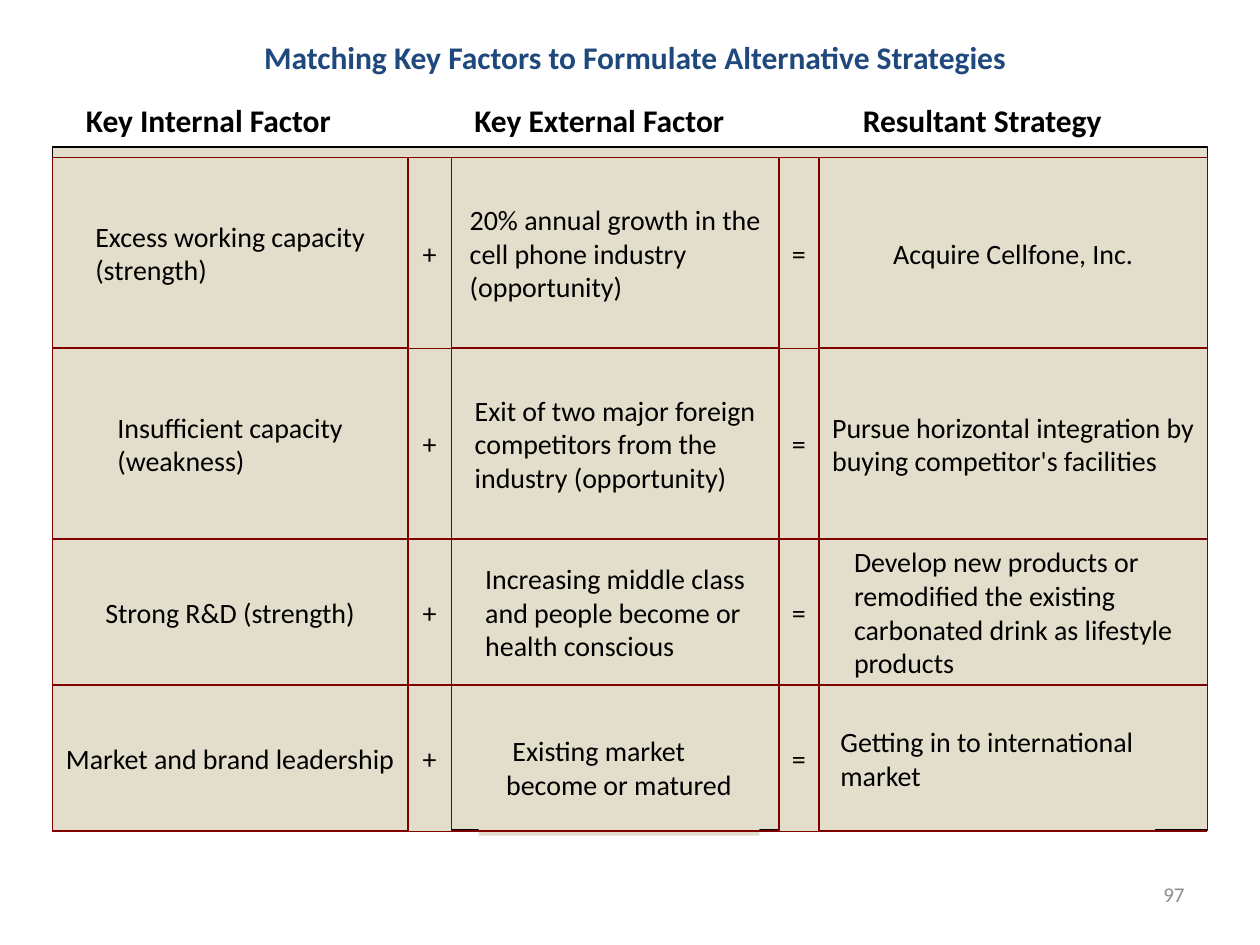
from dataclasses import dataclass
from itertools import pairwise

from lxml.etree import SubElement
from pptx import Presentation
from pptx.dml.color import RGBColor as Rgb
from pptx.enum.shapes import MSO_CONNECTOR as Conn, MSO_SHAPE as Form
from pptx.enum.text import MSO_ANCHOR as Anchor, MSO_AUTO_SIZE as Auto, PP_ALIGN as Align
from pptx.oxml.ns import qn
from pptx.util import Pt


@dataclass(frozen=True)
class Theme:
    font: str = "Calibri"
    head: int = 18
    body: int = 16
    small: int = 12
    ink: Rgb = Rgb(0, 0, 0)
    navy: Rgb = Rgb(0x1F, 0x49, 0x7D)
    sand: Rgb = Rgb(0xE3, 0xDD, 0xCB)
    red: Rgb = Rgb(0x80, 0, 0)
    gray: Rgb = Rgb(0x8C, 0x8C, 0x8C)


COLS = (30, 233, 258, 445, 468, 690)
ROWS = (90, 199, 308, 391.5, 475)
HEADS = ((42, "Key Internal Factor"), (264, "Key External Factor"), (486, "Resultant Strategy"))
FACTS = (
    ("Excess working capacity (strength)",
     "20% annual growth in the cell phone industry (opportunity)",
     "Acquire Cellfone, Inc."),
    ("Insufficient capacity (weakness)",
     "Exit of two major foreign competitors from the industry (opportunity)",
     "Pursue horizontal integration by buying competitor's facilities"),
    ("Strong R&D (strength)",
     "Increasing middle class and people become or health conscious",
     "Develop new products or remodified the existing carbonated drink as lifestyle products"),
    ("Market and brand leadership",
     " Existing market become or matured",
     "Getting in to international market"),
)
PLAIN = {(3, 0): (30, 391.5, 203, 83.5),
         (3, 2): (273.5, 399.5, 160.5, 78),
         (3, 4): (468, 391.5, 192, 83.5)}
OPEN = (2, 391.5)


def put(item, **vals):
    """Set each given attribute on the item."""
    for name, val in vals.items():
        setattr(item, name, val)


class Deck:
    """Holds the theme and the current slide, and draws on it."""

    def __init__(self, theme):
        self.theme = theme
        self.show = Presentation()
        put(self.show, slide_width=Pt(720), slide_height=Pt(540))
        self.slide = self.show.slides.add_slide(self.show.slide_layouts[5])

    def fill(self, shape, text, size, ink, bold=False, align=Align.LEFT, anchor=Anchor.TOP):
        """Fill a shape with one styled paragraph."""
        frame = shape.text_frame
        put(frame, text=text, word_wrap=True, auto_size=Auto.NONE, vertical_anchor=anchor,
            margin_left=Pt(7.2), margin_right=Pt(7.2), margin_top=Pt(3.6), margin_bottom=Pt(3.6))
        para = frame.paragraphs[0]
        para.alignment = align
        font = para.runs[0].font
        put(font, name=self.theme.font, size=Pt(size), bold=bold)
        font.color.rgb = ink
        return frame

    def title(self, box, text):
        """Place and style the title."""
        shape = self.slide.shapes.title
        put(shape, **dict(zip(("left", "top", "width", "height"), map(Pt, box))))
        self.fill(shape, text, self.theme.head, self.theme.navy, True, Align.CENTER)

    def label(self, box, text, size, ink, **form):
        """Add a text box."""
        self.fill(self.slide.shapes.add_textbox(*map(Pt, box)), text, size, ink, **form)

    def panel(self, box, edge=None):
        """Add a sand rectangle, with an edge if given."""
        shape = self.slide.shapes.add_shape(Form.RECTANGLE, *map(Pt, box))
        shape.shadow.inherit = False
        shape.fill.solid()
        shape.fill.fore_color.rgb = self.theme.sand
        if edge is None:
            shape.line.fill.background()
        else:
            shape.line.color.rgb = edge
            shape.line.width = Pt(0.75)
        return shape

    def cell(self, box, text, edge):
        """Add a panel whose left-aligned text block is centred."""
        frame = self.fill(self.panel(box, edge), text, self.theme.body, self.theme.ink,
                          anchor=Anchor.MIDDLE)
        frame._txBody.bodyPr.set("anchorCtr", "1")

    def rule(self, *ends):
        """Add a red line."""
        line = self.slide.shapes.add_connector(Conn.STRAIGHT, *map(Pt, ends))
        line.line.color.rgb = self.theme.red
        line.line.width = Pt(1)
        SubElement(line._element.spPr, qn("a:effectLst"))


def main():
    """Build the strategy matching slide."""
    look = Theme()
    deck = Deck(look)
    deck.title((108, 18, 510, 29), "Matching Key Factors to Formulate Alternative Strategies")
    deck.label((516, 492, 168, 37.5), "97", look.small, look.gray,
               align=Align.RIGHT, anchor=Anchor.MIDDLE)
    deck.panel((30, 84, 660, 390), look.ink)
    spans = list(pairwise(COLS))
    for row, (top, end) in enumerate(pairwise(ROWS)):
        inner, outer, plan = FACTS[row]
        for col, text in enumerate((inner, "+", outer, "=", plan)):
            left, right = spans[col]
            box = PLAIN.get((row, col), (left, top, right - left, end - top))
            deck.cell(box, text, None if (row, col) in PLAIN else look.red)
    for col in (0, 2, 4):
        left, right = spans[col]
        for y in ROWS:
            if (col, y) != OPEN:
                deck.rule(left, y, right, y)
    for x in COLS:
        deck.rule(x, ROWS[0], x, ROWS[-1])
    for left, text in HEADS:
        deck.label((left, 54, 186, 29), text, look.head, look.ink, bold=True)
    deck.show.save("out.pptx")


if __name__ == "__main__":
    main()
